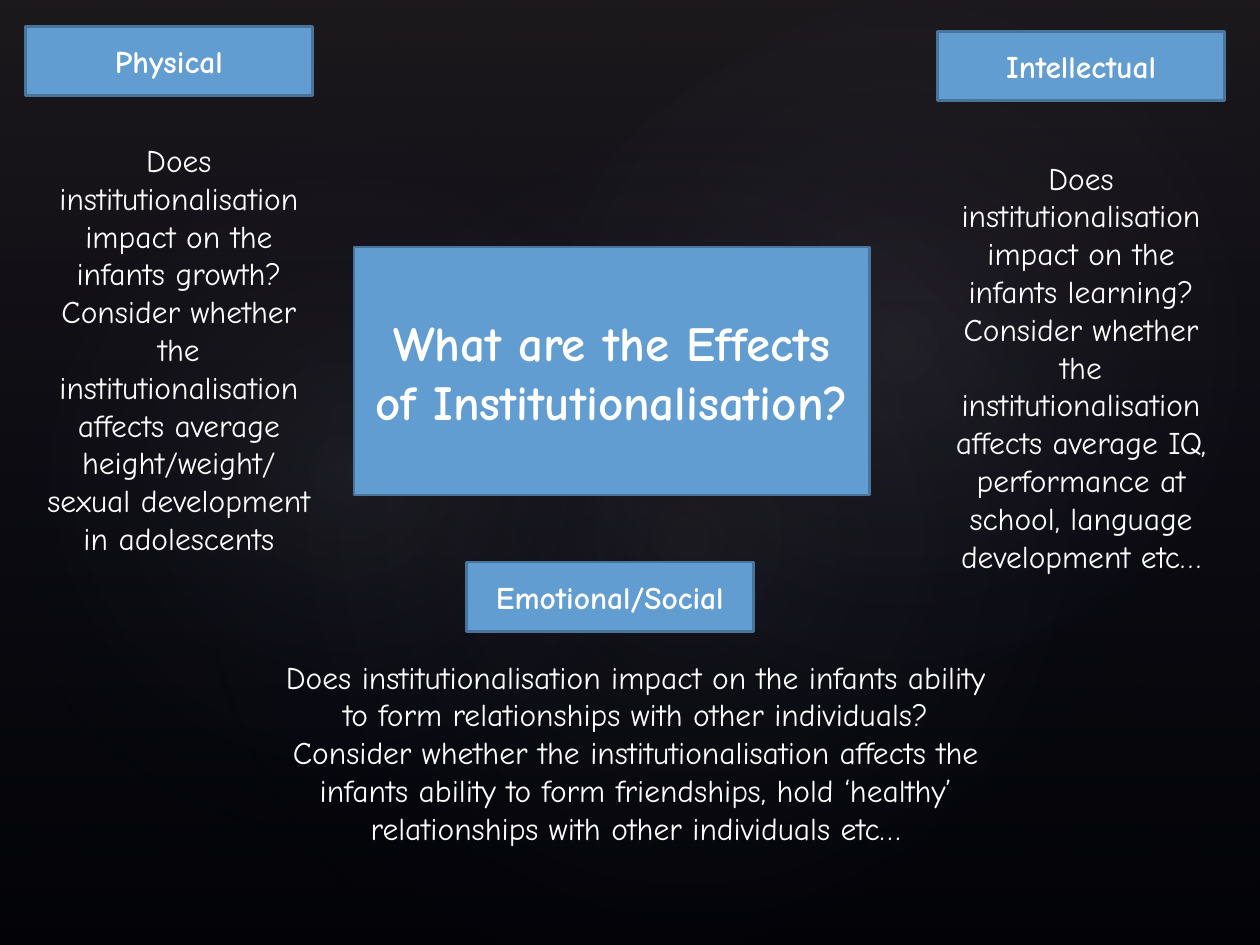
from dataclasses import dataclass
from pptx import Presentation
from pptx.dml.color import RGBColor as Rgb
from pptx.enum.shapes import MSO_SHAPE as Kind
from pptx.enum.text import MSO_ANCHOR as Anchor, MSO_AUTO_SIZE as Fit, PP_ALIGN as Align
from pptx.oxml import parse_xml
from pptx.oxml.ns import nsdecls, qn
from pptx.util import Inches, Pt

FONT = "Comic Neue"
COLOURS = {
    "back": "000000",
    "haze": "504652",
    "navy": "242852",
    "glow": "C4BCC6",
    "box": "629DD1",
    "edge": "49749B",
    "text": "FFFFFF",
}
LINEAR = '<a:lin ang="5400000" scaled="0"/>'
RADIAL = '<a:path path="circle"><a:fillToRect l="50000" t="50000" r="50000" b="50000"/></a:path>'


@dataclass
class Area:
    left: float
    top: float
    width: float
    height: float

    def frame(self) -> tuple:
        return tuple(Inches(n) for n in (self.left, self.top, self.width, self.height))


@dataclass
class Stop:
    place: int
    colour: str
    alpha: int


@dataclass
class Glow:
    area: Area
    turn: float
    alpha: int


@dataclass
class Label:
    area: Area
    text: str
    size: int = 18


@dataclass
class Note:
    area: Area
    text: str


def tint(name: str) -> Rgb:
    return Rgb.from_string(COLOURS[name])


def add_blend(slide, kind: Kind, area: Area, stops: list[Stop], mode: str, turn: float = 0) -> None:
    shape = slide.shapes.add_shape(kind, *area.frame())
    shape.shadow.inherit = False
    shape.rotation = turn
    shape.line.fill.background()
    shape.fill.background()
    marks = "".join(
        f'<a:gs pos="{s.place * 1000}"><a:srgbClr val="{COLOURS[s.colour]}">'
        f'<a:alpha val="{s.alpha * 1000}"/></a:srgbClr></a:gs>'
        for s in stops
    )
    blend = parse_xml(
        f'<a:gradFill {nsdecls("a")} rotWithShape="1"><a:gsLst>{marks}</a:gsLst>{mode}</a:gradFill>'
    )
    props = shape._element.spPr
    props.replace(props.find(qn("a:noFill")), blend)


def set_text(shape, text: str, size: int, bold: bool) -> None:
    shape.text_frame.word_wrap = True
    para = shape.text_frame.paragraphs[0]
    para.text = text
    para.alignment = Align.CENTER
    para.font.name = FONT
    para.font.size = Pt(size)
    para.font.bold = bold
    para.font.color.rgb = tint("text")


def add_label(slide, label: Label) -> None:
    box = slide.shapes.add_shape(Kind.RECTANGLE, *label.area.frame())
    box.shadow.inherit = False
    box.fill.solid()
    box.fill.fore_color.rgb = tint("box")
    box.line.color.rgb = tint("edge")
    box.line.width = Pt(1.5)
    box.text_frame.vertical_anchor = Anchor.MIDDLE
    set_text(box, label.text, label.size, True)


def add_note(slide, note: Note) -> None:
    box = slide.shapes.add_textbox(*note.area.frame())
    set_text(box, note.text, 18, False)
    box.text_frame.auto_size = Fit.SHAPE_TO_FIT_TEXT


GLOWS = [
    Glow(Area(1.5, 1.14, 7.92, 6.24), 328.7, 7),
    Glow(Area(-0.3, 1.28, 6.06, 4.9), 294.3, 8),
    Glow(Area(3.58, 0.13, 7.09, 5.2), 328.7, 8),
]
LABELS = [
    Label(Area(2.81, 1.96, 4.09, 1.97), "What are the Effects of Institutionalisation?", 28),
    Label(Area(0.2, 0.21, 2.28, 0.55), "Physical"),
    Label(Area(7.44, 0.25, 2.28, 0.55), "Intellectual"),
    Label(Area(3.7, 4.46, 2.28, 0.55), "Emotional/Social"),
]
NOTES = [
    Note(
        Area(0.2, 1.07, 2.44, 3.74),
        "Does institutionalisation impact on the infants growth? Consider whether the "
        "institutionalisation affects average height/weight/ sexual development in adolescents",
    ),
    Note(
        Area(7.36, 1.21, 2.44, 3.43),
        "Does institutionalisation impact on the infants learning? Consider whether the "
        "institutionalisation affects average IQ, performance at school, language development etc…",
    ),
    Note(
        Area(2.17, 5.17, 5.75, 1.92),
        "Does institutionalisation impact on the infants ability to form relationships with "
        "other individuals? Consider whether the institutionalisation affects the infants ability "
        "to form friendships, hold ‘healthy’ relationships with other individuals etc…",
    ),
]


def main() -> None:
    deck = Presentation()
    deck.slide_width, deck.slide_height = Inches(10), Inches(7.5)
    slide = deck.slides.add_slide(deck.slide_layouts[6])
    slide.background.fill.solid()
    slide.background.fill.fore_color.rgb = tint("back")
    haze = [Stop(0, "haze", 36), Stop(100, "navy", 10)]
    add_blend(slide, Kind.RECTANGLE, Area(0, 0, 10, 7.5), haze, LINEAR)
    for glow in GLOWS:
        stops = [Stop(0, "glow", glow.alpha), Stop(58, "navy", 0)]
        add_blend(slide, Kind.OVAL, glow.area, stops, RADIAL, glow.turn)
    for label in LABELS:
        add_label(slide, label)
    for note in NOTES:
        add_note(slide, note)
    deck.save("out.pptx")


if __name__ == "__main__":
    main()
